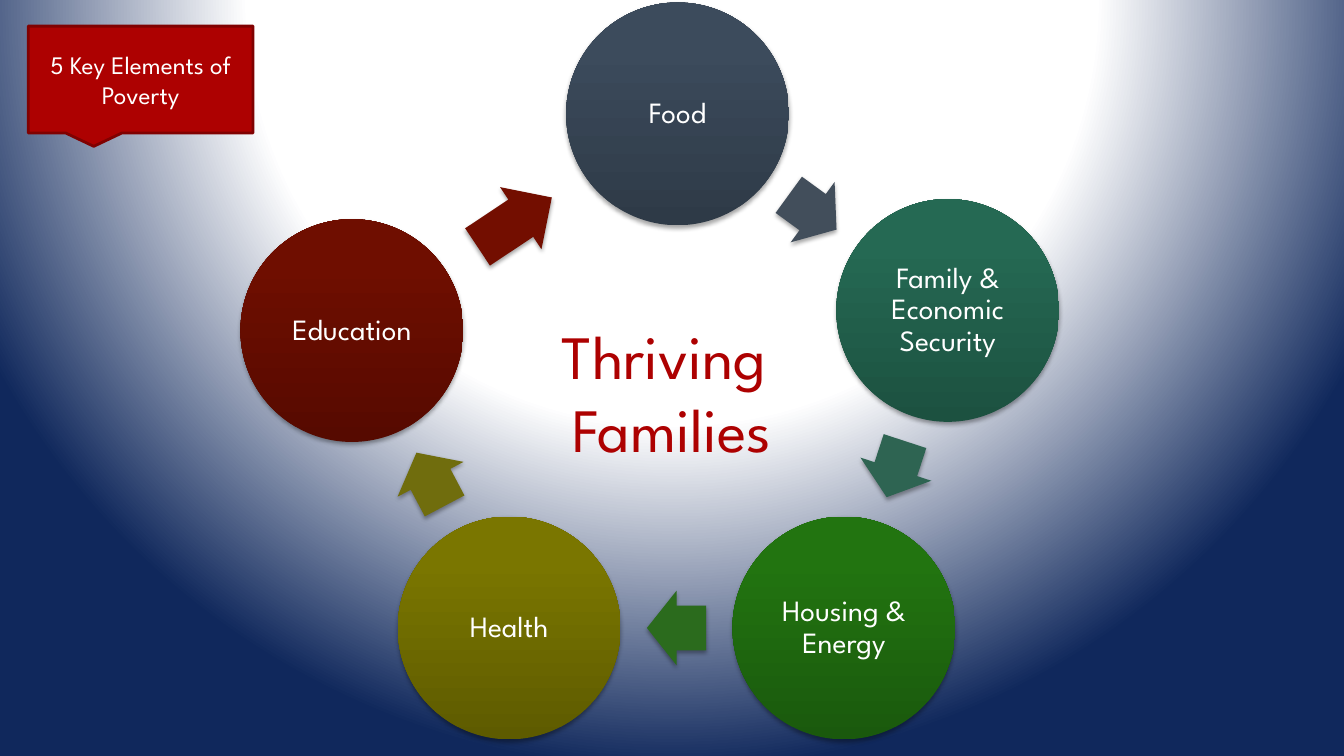
from math import atan2, degrees, hypot

from lxml.etree import SubElement
from pptx import Presentation
from pptx.dml.color import RGBColor
from pptx.enum.shapes import MSO_SHAPE
from pptx.enum.text import MSO_ANCHOR, PP_ALIGN
from pptx.oxml import parse_xml
from pptx.oxml.ns import nsdecls, qn
from pptx.util import Inches, Pt

# Content: label, circle centre in inches, gradient bottom to top, arrow colour
ELEMENTS = [
    ("Food", (6.72, 1.13), ("2E3A47", "3C4B5C", "3C4C5D"), "424E5B"),
    ("Family & Economic Security", (9.4, 3.08), ("1C5140", "256953", "246B53"), "2E6452"),
    ("Housing & Energy", (8.37, 6.23), ("1A590D", "227410", "21760E"), "2B6B1D"),
    ("Health", (5.05, 6.23), ("5E5B00", "7A7600", "7A7700"), "706D0D"),
    ("Education", (3.49, 3.28), ("560A00", "6F0E00", "700E00"), "730E00"),
]
CENTRE_LINES = ["Thriving ", "Families"]
CALLOUT = "5 Key Elements of Poverty"

FONT = "League Spartan"
COLORS = {"red": "AD0101", "edge": "800101", "white": "FFFFFF",
          "navy": "10285C", "shadow": "000000"}
WIDTH, HEIGHT = 13.33, 7.5
DIAMETER = 2.21
ARROW_HEIGHT = 0.74
ARROW_SHARE = 0.53  # arrow length as a share of the gap between two circles


def set_gradient(fill, parent, stops, direction):
    """Fill with stops of (position %, colour, opacity %)."""
    fill.gradient()
    stop_xml = "".join(
        f'<a:gs pos="{position * 1000}"><a:srgbClr val="{color}">'
        f'<a:alpha val="{opacity * 1000}"/></a:srgbClr></a:gs>'
        for position, color, opacity in stops)
    gradient = parent.find(".//" + qn("a:gradFill"))
    gradient.getparent().replace(gradient, parse_xml(
        f'<a:gradFill {nsdecls("a")} rotWithShape="1">'
        f"<a:gsLst>{stop_xml}</a:gsLst>{direction}</a:gradFill>"))


def add_shape(kind, left, top, width, height):
    shape = slide.shapes.add_shape(
        kind, Inches(left), Inches(top), Inches(width), Inches(height))
    shape.shadow.inherit = False
    shape.line.fill.background()
    return shape


def add_shadow(shape):
    effects = shape.element.spPr.find(qn("a:effectLst"))
    shadow = SubElement(effects, qn("a:outerShdw"), blurRad=str(Pt(3.1)),
                        dist=str(Pt(1.8)), dir="5400000", rotWithShape="0")
    color = SubElement(shadow, qn("a:srgbClr"), val=COLORS["shadow"])
    SubElement(color, qn("a:alpha"), val="35000")


def set_text(shape, lines, size, color, spacing=None):
    frame = shape.text_frame
    frame.word_wrap = True
    frame.text = "\n".join(lines)
    for paragraph in frame.paragraphs:
        paragraph.alignment = PP_ALIGN.CENTER
        paragraph.line_spacing = spacing
        paragraph.font.name = FONT
        paragraph.font.size = Pt(size)
        paragraph.font.color.rgb = RGBColor.from_string(color)
    return frame


presentation = Presentation()
presentation.slide_width = Inches(WIDTH)
presentation.slide_height = Inches(HEIGHT)
slide = presentation.slides.add_slide(presentation.slide_layouts[6])

# Background glow from above the slide
set_gradient(
    slide.background.fill, slide.element,
    [(0, COLORS["white"], 100), (55, COLORS["white"], 25), (100, COLORS["navy"], 100)],
    '<a:path path="circle"><a:fillToRect l="50000" t="-80000" r="50000" b="180000"/></a:path>')

# Centre title
title = slide.shapes.add_textbox(0, Inches(3.1), Inches(WIDTH), Inches(1.58))
set_text(title, CENTRE_LINES, 44, COLORS["red"])

# Cycle: each circle, then the arrow halfway to the next one
for index, (label, (x, y), shades, arrow_color) in enumerate(ELEMENTS):
    circle = add_shape(MSO_SHAPE.OVAL, x - DIAMETER / 2, y - DIAMETER / 2,
                       DIAMETER, DIAMETER)
    stops = [(position, shade, 100) for position, shade in zip((0, 80, 100), shades)]
    set_gradient(circle.fill, circle.element, stops, '<a:lin ang="16200000" scaled="0"/>')
    add_shadow(circle)
    frame = set_text(circle, [label], 21, COLORS["white"], 0.9)
    frame.vertical_anchor = MSO_ANCHOR.MIDDLE
    frame.margin_left = frame.margin_right = Inches(0.03)
    frame.margin_top = frame.margin_bottom = Inches(0.03)

    next_x, next_y = ELEMENTS[(index + 1) % len(ELEMENTS)][1]
    run, rise = next_x - x, next_y - y
    length = (hypot(run, rise) - DIAMETER) * ARROW_SHARE
    arrow = add_shape(MSO_SHAPE.RIGHT_ARROW, (x + next_x - length) / 2,
                      (y + next_y - ARROW_HEIGHT) / 2, length, ARROW_HEIGHT)
    arrow.rotation = degrees(atan2(rise, run)) % 360
    arrow.adjustments[0], arrow.adjustments[1] = 0.6, 0.5
    arrow.fill.solid()
    arrow.fill.fore_color.rgb = RGBColor.from_string(arrow_color)
    add_shadow(arrow)

# Callout
callout = add_shape(MSO_SHAPE.RECTANGULAR_CALLOUT, 0.28, 0.26, 2.23, 1.06)
callout.fill.solid()
callout.fill.fore_color.rgb = RGBColor.from_string(COLORS["red"])
callout.line.color.rgb = RGBColor.from_string(COLORS["edge"])
callout.line.width = Pt(2)
set_text(callout, [CALLOUT], 18, COLORS["white"]).vertical_anchor = MSO_ANCHOR.MIDDLE

presentation.save("out.pptx")
